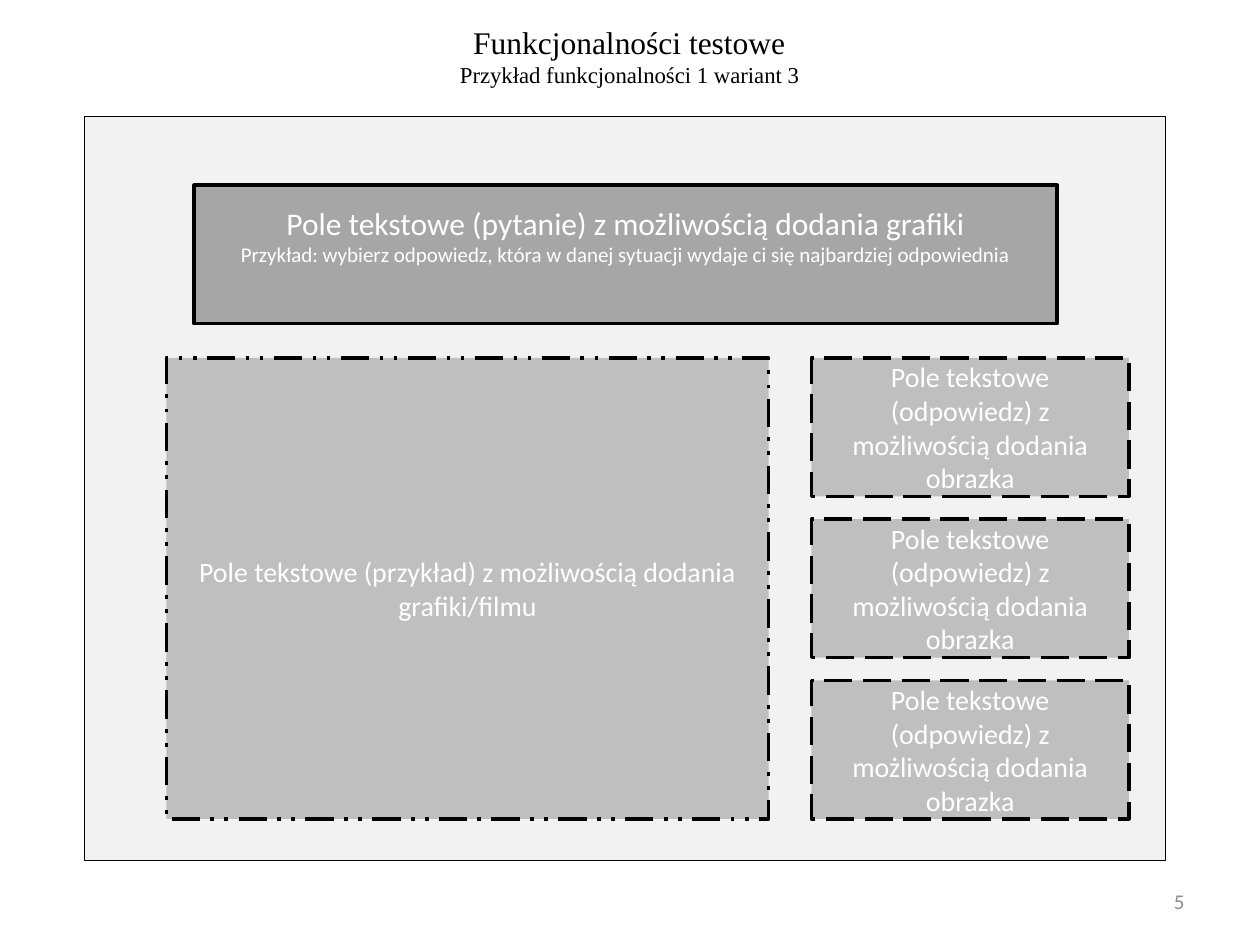
from pptx import Presentation
from pptx.dml.color import RGBColor
from pptx.enum.dml import MSO_LINE
from pptx.enum.shapes import MSO_SHAPE
from pptx.enum.text import MSO_ANCHOR, MSO_AUTO_SIZE, PP_ALIGN
from pptx.util import Inches, Pt

RECTANGLE = MSO_SHAPE.RECTANGLE
TOP, MIDDLE = MSO_ANCHOR.TOP, MSO_ANCHOR.MIDDLE
CENTER, RIGHT = PP_ALIGN.CENTER, PP_ALIGN.RIGHT
NO_AUTOFIT = MSO_AUTO_SIZE.NONE
LONG_DASH, DASH_DOT_DOT = MSO_LINE.LONG_DASH, MSO_LINE.DASH_DOT_DOT
TITLE_ONLY = 5
BLACK, WHITE = "000000", "FFFFFF"
PANEL_GREY, QUESTION_GREY, FIELD_GREY, NUMBER_GREY = "F2F2F2", "A6A6A6", "BFBFBF", "8C8C8C"
ANSWER_COUNT = 3


def colour(value):
    return RGBColor.from_string(value)


def write_lines(frame, lines, font, fill, align=CENTER, **frame_format):
    """Write (text, size) pairs, one paragraph each."""
    settings = {"word_wrap": True, "vertical_anchor": MIDDLE, **frame_format}
    for name, value in settings.items():
        setattr(frame, name, value)
    for index, (text, size) in enumerate(lines):
        para = frame.paragraphs[0] if index == 0 else frame.add_paragraph()
        para.alignment = align
        span = para.add_run()
        span.text = text
        for name, value in {"name": font, "size": Pt(size)}.items():
            setattr(span.font, name, value)
        span.font.color.rgb = colour(fill)


def add_field(page, box, fill, lines=(), weight=2, dash=None, **frame_format):
    """Draw an outlined rectangle with centred white text."""
    shape = page.shapes.add_shape(RECTANGLE, *map(Inches, box))
    shape.shadow.inherit = False
    shape.fill.solid()
    shape.fill.fore_color.rgb = colour(fill)
    shape.line.color.rgb = colour(BLACK)
    shape.line.width = Pt(weight)
    if dash is not None:
        shape.line.dash_style = dash
    write_lines(shape.text_frame, lines, "Calibri", WHITE, **frame_format)


def add_heading(page, box):
    title = page.shapes.title
    title.left, title.top, title.width, title.height = map(Inches, box)
    lines = [("Funkcjonalności testowe", 18), ("Przykład funkcjonalności 1 wariant 3", 13)]
    write_lines(title.text_frame, lines, "Times New Roman", BLACK, word_wrap=False,
                vertical_anchor=TOP, auto_size=NO_AUTOFIT)


def add_question(page, box):
    lines = [
        ("Pole tekstowe (pytanie) z możliwością dodania grafiki", 18),
        ("Przykład: wybierz odpowiedz, która w danej sytuacji wydaje ci się"
         " najbardziej odpowiednia", 12),
    ]
    # The deep lower margin lifts the text above the middle
    add_field(page, box, QUESTION_GREY, lines, margin_bottom=Inches(0.35))


def add_example(page, box):
    lines = [("Pole tekstowe (przykład) z możliwością dodania grafiki/filmu", 16)]
    add_field(page, box, FIELD_GREY, lines, dash=DASH_DOT_DOT)


def add_answers(page, box, field_height):
    """Spread equal answer fields over the height of the box."""
    left, top, width, height = box
    pitch = (height - field_height) / (ANSWER_COUNT - 1)
    lines = [("Pole tekstowe (odpowiedz) z możliwością dodania obrazka", 16)]
    for row in range(ANSWER_COUNT):
        add_field(page, (left, top + row * pitch, width, field_height),
                  FIELD_GREY, lines, dash=LONG_DASH)


def add_screen(page, box):
    """Lay out the test screen inside its panel."""
    left, top, width, height = box
    field_height = 1.1
    body_top, body_height = top + 1.92, height - 2.25
    add_field(page, box, PANEL_GREY, weight=0.25)
    add_question(page, (left + 0.87, top + 0.55, width - 1.73, field_height))
    add_answers(page, (left + 5.77, body_top, 2.52, body_height), field_height)
    add_example(page, (left + 0.65, body_top, 4.78, body_height))


def add_page_number(page, box):
    number = page.shapes.add_textbox(*map(Inches, box))
    write_lines(number.text_frame, [("5", 12)], "Calibri", NUMBER_GREY, align=RIGHT)


def main():
    deck = Presentation()
    deck.slide_width, deck.slide_height = Inches(10), Inches(7.5)
    page = deck.slides.add_slide(deck.slide_layouts[TITLE_ONLY])
    add_heading(page, (3.53, 0.13, 2.93, 0.62))
    add_screen(page, (0.67, 0.92, 8.58, 5.91))
    add_page_number(page, (7.17, 6.95, 2.33, 0.4))
    deck.save("out.pptx")


if __name__ == "__main__":
    main()
